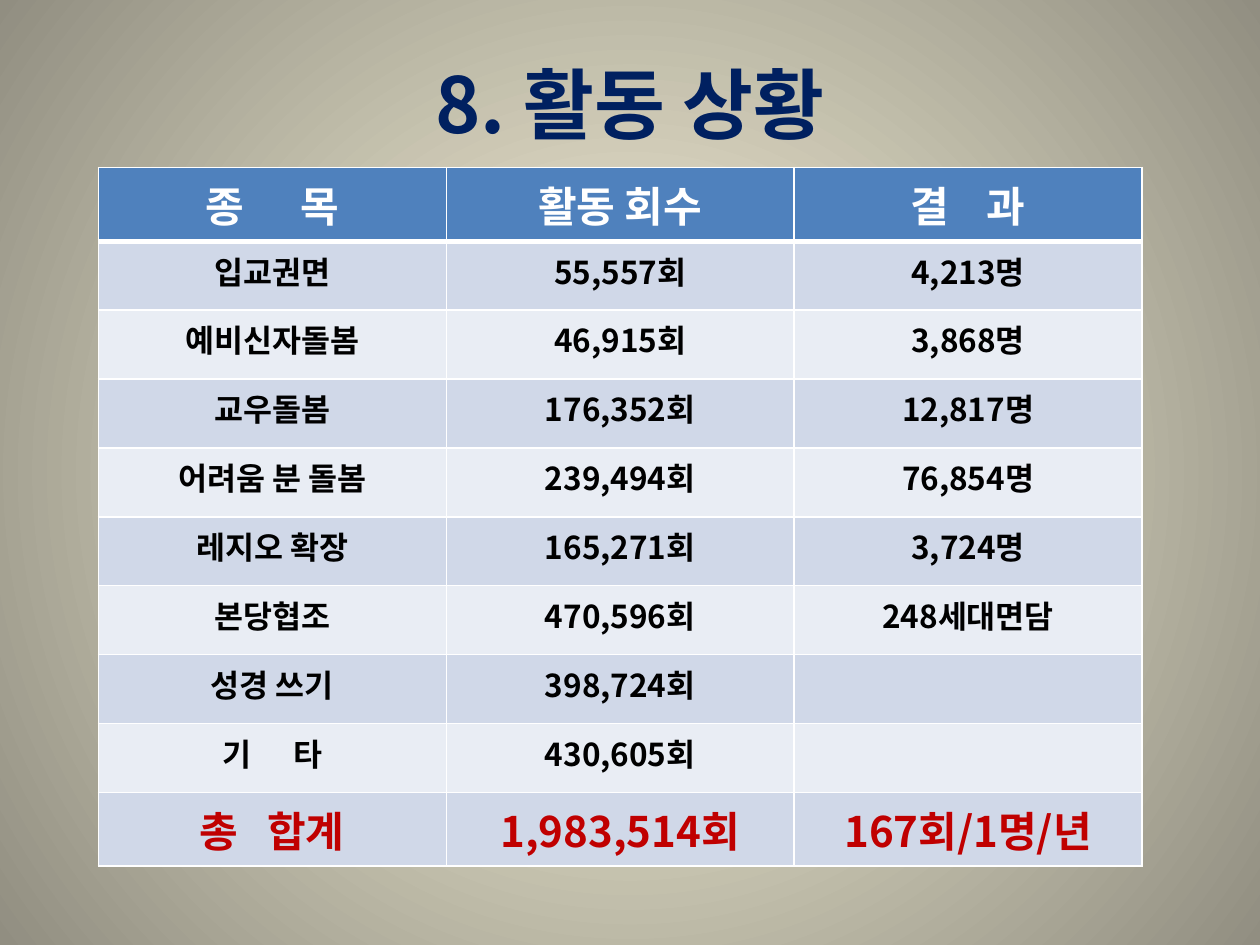
from dataclasses import dataclass

from lxml import etree
from pptx import Presentation
from pptx.dml import color
from pptx.enum import text
from pptx.oxml import ns
from pptx.slide import Slide
from pptx.util import Pt

HEADER = ["종 목", "활동 회수", "결 과"]
ACTIVITIES = [
    ["입교권면", "55,557회", "4,213명"],
    ["예비신자돌봄", "46,915회", "3,868명"],
    ["교우돌봄", "176,352회", "12,817명"],
    ["어려움 분 돌봄", "239,494회", "76,854명"],
    ["레지오 확장", "165,271회", "3,724명"],
    ["본당협조", "470,596회", "248세대면담"],
    ["성경 쓰기", "398,724회", ""],
    ["기 타", "430,605회", ""],
]
TOTAL = ["총 합계", "1,983,514회", "167회/1명/년"]
SPREAD = {"종 목": 27, "결 과": 16, "기 타": 20, "총 합계": 11}


def rgb(value):
    return color.RGBColor.from_string(value)


@dataclass
class SlideBuilder:
    slide: Slide
    font: str = "Noto Sans CJK KR"
    line: str = "FFFFFF"

    def background(self, center, edge):
        fill = self.slide.background.fill
        fill.gradient()
        for stop, value in zip(fill.gradient_stops, (center, edge)):
            stop.color.rgb = rgb(value)
        linear = next(self.slide.element.iter(ns.qn("a:lin")))
        circle = etree.Element(ns.qn("a:path"), path="circle")
        etree.SubElement(circle, ns.qn("a:fillToRect"), {side: "50000" for side in "ltrb"})
        linear.getparent().replace(linear, circle)

    def label(self, frame, content, size, value):
        paragraph = frame.paragraphs[0]
        paragraph.alignment = text.PP_ALIGN.CENTER
        spread = SPREAD.get(content)
        for part in content.partition(" ") if spread else [content]:
            run = paragraph.add_run()
            run.text = part
            run.font.size = Pt(size)
            run.font.bold = True
            run.font.color.rgb = rgb(value)
            run.font.name = self.font
            properties = run.font._element
            etree.SubElement(properties, ns.qn("a:ea"), typeface=self.font)
            if part == " ":
                properties.set("spc", str(spread * 100))

    def title(self, content, left, top, width, height):
        shape = self.slide.shapes.title
        shape.left, shape.top, shape.width, shape.height = map(Pt, (left, top, width, height))
        frame = shape.text_frame
        frame.vertical_anchor = text.MSO_ANCHOR.MIDDLE
        self.label(frame, content, 44, "002060")

    def borders(self, cell, top, bottom):
        properties = cell._tc.get_or_add_tcPr()
        for side, width in zip("LRTB", (1, 1, top, bottom)):
            line = etree.SubElement(properties, ns.qn(f"a:ln{side}"), w=str(int(Pt(width))))
            fill = etree.SubElement(line, ns.qn("a:solidFill"))
            etree.SubElement(fill, ns.qn("a:srgbClr"), val=self.line)

    def table(self, rows, left, top, column_width, row_height):
        columns = len(rows[0])
        frame = self.slide.shapes.add_table(
            len(rows), columns, Pt(left), Pt(top),
            Pt(column_width * columns), Pt(row_height * len(rows)))
        table = frame.table
        for column in table.columns:
            column.width = Pt(column_width)
        last = len(rows) - 1
        for index, values in enumerate(rows):
            table.rows[index].height = Pt(row_height)
            size = 24 if index in (0, last) else 18
            ink = {0: "FFFFFF", last: "C00000"}.get(index, "000000")
            band = "4F81BD" if index == 0 else ("E9EDF4", "D0D8E8")[index % 2]
            for cell, content in zip(table.rows[index].cells, values):
                self.borders(cell, 3 if index == 1 else 1, 3 if index == 0 else 1)
                cell.fill.solid()
                cell.fill.fore_color.rgb = rgb(band)
                if content:
                    self.label(cell.text_frame, content, size, ink)


def main():
    presentation = Presentation()
    presentation.slide_width, presentation.slide_height = Pt(720), Pt(540)
    builder = SlideBuilder(presentation.slides.add_slide(presentation.slide_layouts[5]))
    builder.background("FCF7DD", "918E81")
    builder.title("8. 활동 상황", 36, 21.6, 648, 74.2)
    builder.table([HEADER, *ACTIVITIES, TOTAL], 56.2, 95.8, 198.8, 39.4)
    presentation.save("out.pptx")


if __name__ == "__main__":
    main()
